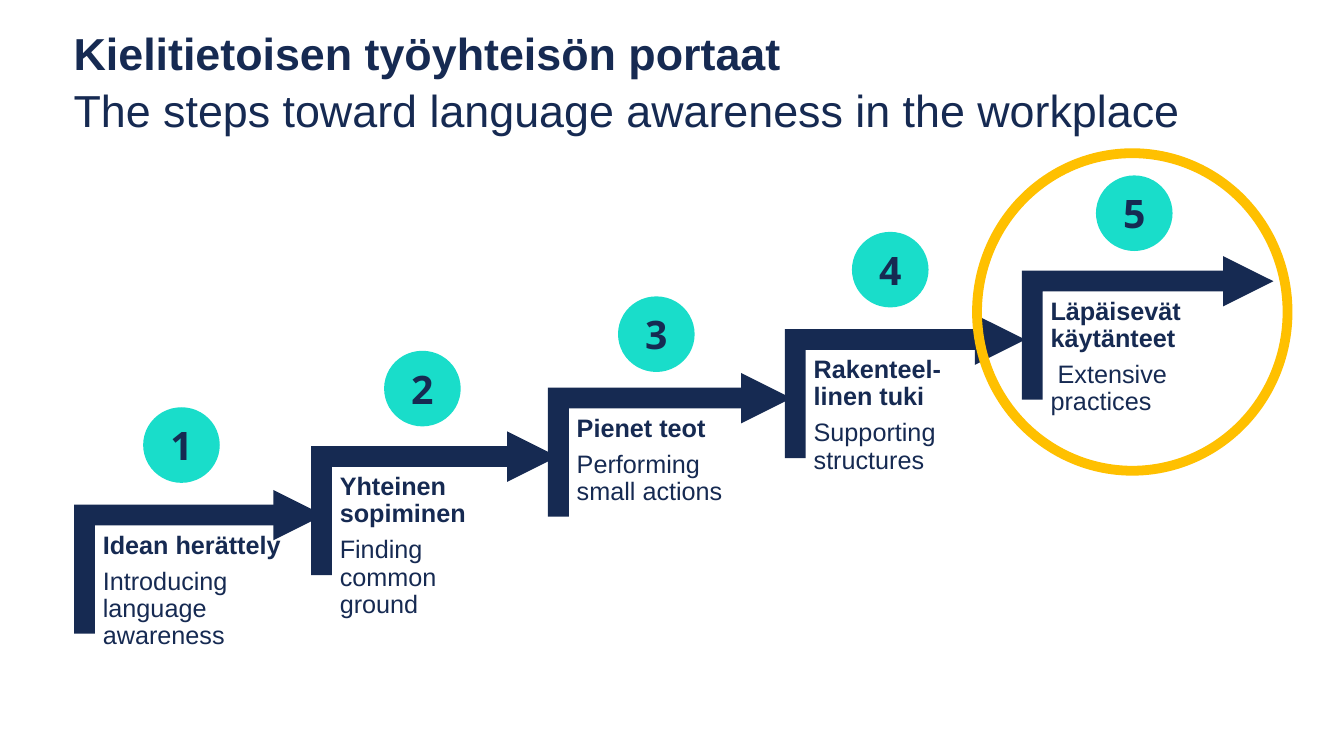
"""Builds the slide with five rising steps toward language awareness at work."""
from lxml.etree import SubElement
from pptx import Presentation
from pptx.dml.color import RGBColor
from pptx.enum.shapes import MSO_CONNECTOR, MSO_SHAPE
from pptx.enum.text import MSO_ANCHOR, PP_ALIGN
from pptx.oxml.ns import qn
from pptx.util import Inches, Pt

COLORS = {"navy": "162A52", "turquoise": "19DDCA", "amber": "FFC000"}
STEPS = [
    ("Idean herättely", "Introducing language awareness"),
    ("Yhteinen sopiminen", "Finding common ground"),
    ("Pienet teot", "Performing small actions"),
    ("Rakenteel-linen tuki", "Supporting structures"),
    ("Läpäisevät käytänteet", "Extensive practices"),
]
BADGES = [(1.42, 4.04), (3.81, 3.48), (6.13, 2.94), (8.45, 2.3), (10.87, 1.74)]
ARROW_STARTS = [2.25, 4.57, 6.89, 9.21, 11.67]
STEP_RUN, STEP_RISE = 2.35, 0.58


def style_span(span, size, bold, font="Arial"):
    span.font.name = font
    span.font.size = Pt(size)
    span.font.bold = bold
    span.font.color.rgb = RGBColor.from_string(COLORS["navy"])


def add_filled_shape(kind, left, top, width, height, color):
    shape = slide.shapes.add_shape(kind, Inches(left), Inches(top), Inches(width), Inches(height))
    shape.shadow.inherit = False
    shape.fill.solid()
    shape.fill.fore_color.rgb = RGBColor.from_string(COLORS[color])
    shape.line.fill.background()
    return shape


deck = Presentation()
deck.slide_width, deck.slide_height = Inches(13.33), Inches(7.5)
slide = deck.slides.add_slide(deck.slide_layouts[5])

title = slide.shapes.title
title.left, title.top, title.width, title.height = Inches(0.63), Inches(0.6), Inches(12.14), Inches(0.92)
title.text_frame.text = "Kielitietoisen työyhteisön portaat\vThe steps toward language awareness in the workplace"
title.text_frame.vertical_anchor = MSO_ANCHOR.MIDDLE
title.text_frame.margin_bottom = Inches(0.59)
heading = title.text_frame.paragraphs[0]
heading.alignment = PP_ALIGN.LEFT
heading.line_spacing = 1.05
for span, bold in zip(heading.runs, (True, False)):
    style_span(span, 32, bold)

for index, texts in enumerate(STEPS):
    left, top = 0.95 + STEP_RUN * index, 5.21 - STEP_RISE * index
    corner = add_filled_shape(MSO_SHAPE.CORNER, left + 0.21, top - 0.63, 1.28, 2.13, "navy")
    corner.rotation = 90
    corner.adjustments[0] = corner.adjustments[1] = 0.161

    box = slide.shapes.add_textbox(Inches(left), Inches(top), Inches(1.92), Inches(1.68))
    frame = box.text_frame
    frame.word_wrap = True
    frame.margin_left = frame.margin_right = frame.margin_top = frame.margin_bottom = Inches(0.07)
    frame.text = "\n".join(texts)
    for para, bold in zip(frame.paragraphs, (True, False)):
        para.line_spacing = 0.9
        para.space_after = Pt(6.3)
        style_span(para.runs[0], 18, bold)

last_para = frame.paragraphs[1]
last_para._p.get_or_add_pPr().set("indent", str(Inches(0.07)))

for number, (left, top) in enumerate(BADGES, start=1):
    badge = add_filled_shape(MSO_SHAPE.FLOWCHART_CONNECTOR, left, top, 0.76, 0.75, "turquoise")
    badge.text_frame.text = str(number)
    badge.text_frame.vertical_anchor = MSO_ANCHOR.MIDDLE
    para = badge.text_frame.paragraphs[0]
    para.alignment = PP_ALIGN.CENTER
    style_span(para.runs[0], 28, True, "Noto Sans")

for index, left in enumerate(ARROW_STARTS):
    height = Inches(5.11 - STEP_RISE * index)
    arrow = slide.shapes.add_connector(
        MSO_CONNECTOR.STRAIGHT, Inches(left), height, Inches(left + 0.96), height)
    arrow.line.color.rgb = RGBColor.from_string(COLORS["navy"])
    arrow.line.width = Pt(12)
    SubElement(arrow.line._get_or_add_ln(), qn("a:tailEnd"), type="triangle")
    SubElement(arrow._element.spPr, qn("a:effectLst"))

ring = add_filled_shape(MSO_SHAPE.OVAL, 9.69, 1.52, 3.08, 3.15, "amber")
ring.fill.background()
ring.line.color.rgb = RGBColor.from_string(COLORS["amber"])
ring.line.width = Pt(7)

deck.save("out.pptx")
